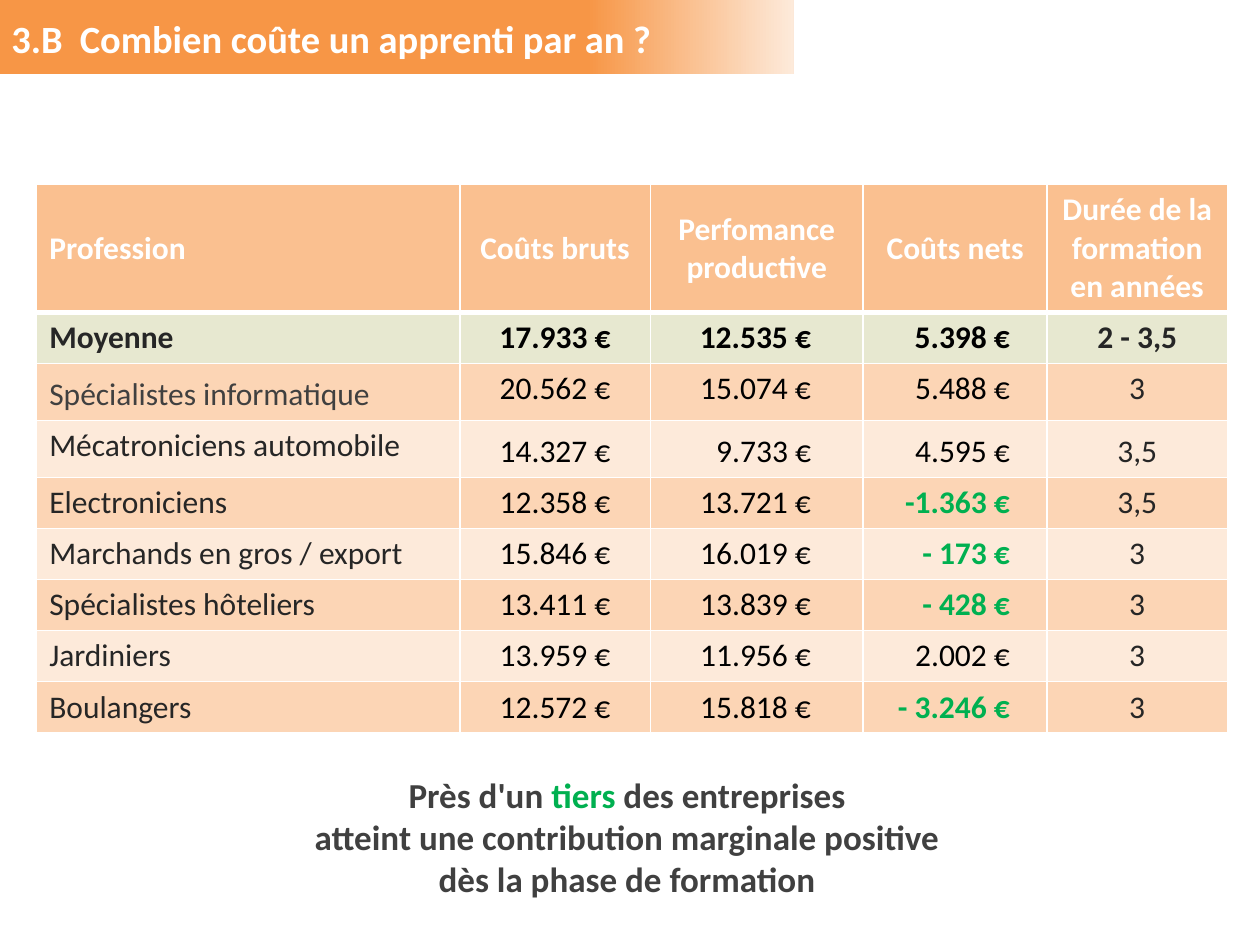
import pptx
import pptx.dml.color
import pptx.enum.shapes
import pptx.enum.text
import pptx.oxml
import pptx.oxml.ns
import pptx.util
from pptx.util import Cm

ALIGN = pptx.enum.text.PP_ALIGN
ANCHOR = pptx.enum.text.MSO_ANCHOR
WHITE, BLACK, DARK, GREY, GREEN = "FFFFFF", "000000", "262626", "404040", "00B050"
HEADER_FILL, AVERAGE_FILL, BAND_FILLS = "FAC090", "E7E8D0", ("FDEADA", "FCD5B5")

HEADINGS = ("Profession", "Coûts bruts", "Perfomance productive", "Coûts nets",
            "Durée de la formation en années")
COSTS = (
    ("Moyenne", "17.933 €", "12.535 €", "5.398 €", "2 - 3,5"),
    ("Spécialistes informatique", "20.562 €", "15.074 €", "5.488 €", "3"),
    ("Mécatroniciens automobile", "14.327 €", "9.733 €", "4.595 €", "3,5"),
    ("Electroniciens", "12.358 €", "13.721 €", "-1.363 €", "3,5"),
    ("Marchands en gros / export", "15.846 €", "16.019 €", "- 173 €", "3"),
    ("Spécialistes hôteliers", "13.411 €", "13.839 €", "- 428 €", "3"),
    ("Jardiniers", "13.959 €", "11.956 €", "2.002 €", "3"),
    ("Boulangers", "12.572 €", "15.818 €", "- 3.246 €", "3"),
)
COLUMN_WIDTHS = (8.53, 3.84, 4.29, 3.71, 3.63)
ROW_HEIGHTS = (2.52, 1.03, 1.13, 1.13) + (1.03,) * 5
COLUMN_ALIGNMENTS = (ALIGN.LEFT, ALIGN.CENTER, ALIGN.RIGHT, ALIGN.RIGHT, ALIGN.CENTER)
RIGHT_MARGINS = {2: 1.05, 3: 0.75}
LOOSE_CELLS = {(2, 0), (3, 1), (3, 2), (3, 3), (3, 4)}


def rgb(code):
    """Return the colour for a hex string."""
    return pptx.dml.color.RGBColor.from_string(code)


def apply_format(target, values):
    """Set each named attribute of the target."""
    for name, value in values.items():
        setattr(target, name, value)


def add_run(paragraph, text, size, color, bold=True):
    """Append a formatted run to the paragraph."""
    run = paragraph.add_run()
    run.text = text
    apply_format(run.font, {"name": "Calibri", "size": pptx.util.Pt(size), "bold": bold})
    run.font.color.rgb = rgb(color)


def add_title(slide, left, top, width, height):
    """Place the title on a bar that fades to the right."""
    bar = slide.shapes.add_shape(pptx.enum.shapes.MSO_SHAPE.RECTANGLE, left, top, width, height)
    bar.shadow.inherit = False
    bar.line.fill.background()
    bar.fill.gradient()
    bar.fill.gradient_angle = 0
    for stop, position, color in zip(bar.fill.gradient_stops, (0.74, 1), ("F79646", "FDEADA")):
        stop.position = position
        stop.color.rgb = rgb(color)

    title = slide.shapes.title
    title.element.addprevious(bar.element)
    apply_format(title, {"left": left, "top": top + Cm(0.17),
                         "width": width, "height": height - Cm(0.3)})
    apply_format(title.text_frame, {"margin_left": Cm(0.23), "word_wrap": True,
                                    "vertical_anchor": ANCHOR.MIDDLE,
                                    "auto_size": pptx.enum.text.MSO_AUTO_SIZE.NONE})
    paragraph = title.text_frame.paragraphs[0]
    paragraph.alignment = ALIGN.LEFT
    namespace = pptx.oxml.ns.nsdecls("a")
    paragraph._p.get_or_add_pPr().append(pptx.oxml.parse_xml(
        f'<a:tabLst {namespace}><a:tab pos="{Cm(1.38)}" algn="l"/></a:tabLst>'))
    add_run(paragraph, "3.B\tCombien coûte un apprenti par an ?", 22, WHITE)


def set_borders(cell, row_index):
    """Draw white cell borders, with a thick line under the header."""
    widths = {"L": 1, "R": 1, "T": 3 if row_index == 1 else 1, "B": 3 if row_index == 0 else 1}
    properties = cell._tc.get_or_add_tcPr()
    for position, (side, width) in enumerate(widths.items()):
        properties.insert(position, pptx.oxml.parse_xml(
            f'<a:ln{side} {pptx.oxml.ns.nsdecls("a")} w="{pptx.util.Pt(width)}">'
            f'<a:solidFill><a:srgbClr val="{WHITE}"/></a:solidFill></a:ln{side}>'))


def cell_style(row_index, column_index, text):
    """Return fill, text colour and weight for a table cell."""
    if row_index == 0:
        return HEADER_FILL, WHITE, True
    fill = AVERAGE_FILL if row_index == 1 else BAND_FILLS[(row_index + 1) % 2]
    if column_index == 3 and text.startswith("-"):
        return fill, GREEN, True
    color = DARK if column_index in (0, 4) else BLACK
    if (row_index, column_index) == (2, 0):
        color = GREY
    return fill, color, row_index == 1


def fill_cell(cell, row_index, column_index, text):
    """Write and format one cell of the cost table."""
    fill, color, bold = cell_style(row_index, column_index, text)
    cell.fill.solid()
    cell.fill.fore_color.rgb = rgb(fill)
    set_borders(cell, row_index)
    paragraph = cell.text_frame.paragraphs[0]
    paragraph.alignment = COLUMN_ALIGNMENTS[column_index]
    if row_index == 0:
        cell.vertical_anchor = ANCHOR.MIDDLE
        paragraph.alignment = ALIGN.CENTER if column_index else ALIGN.LEFT
    elif column_index in RIGHT_MARGINS:
        cell.margin_right = Cm(RIGHT_MARGINS[column_index])
    if (row_index, column_index) in LOOSE_CELLS:
        apply_format(paragraph, {"line_spacing": 1.15, "space_after": pptx.util.Pt(10)})
    add_run(paragraph, text, 18, color, bold)


def add_cost_table(slide, left, top, width, height):
    """Place the table of training costs by profession."""
    rows = (HEADINGS,) + COSTS
    table = slide.shapes.add_table(len(rows), len(HEADINGS), left, top, width, height).table
    for column, column_width in zip(table.columns, COLUMN_WIDTHS):
        column.width = Cm(column_width)
    for row_index, texts in enumerate(rows):
        table.rows[row_index].height = Cm(ROW_HEIGHTS[row_index])
        for column_index, text in enumerate(texts):
            fill_cell(table.cell(row_index, column_index), row_index, column_index, text)


def add_conclusion(slide, left, top, width, height):
    """Place the centred closing statement."""
    frame = slide.shapes.add_textbox(left, top, width, height).text_frame
    frame.word_wrap = True
    lines = (
        (("Près d'un ", GREY), ("tiers", GREEN), (" des entreprises", GREY)),
        (("atteint une contribution marginale positive", GREY),),
        (("dès la phase de formation", GREY),),
    )
    for index, line in enumerate(lines):
        paragraph = frame.add_paragraph() if index else frame.paragraphs[0]
        paragraph.alignment = ALIGN.CENTER
        for text, color in line:
            add_run(paragraph, text, 20, color)


def main():
    """Build and save the presentation."""
    presentation = pptx.Presentation()
    apply_format(presentation, {"slide_width": Cm(25.4), "slide_height": Cm(19.05)})
    slide = presentation.slides.add_slide(presentation.slide_layouts[5])
    add_title(slide, Cm(0), Cm(0), Cm(16), Cm(1.5))
    add_cost_table(slide, Cm(0.74), Cm(3.72), Cm(sum(COLUMN_WIDTHS)), Cm(sum(ROW_HEIGHTS)))
    add_conclusion(slide, Cm(0.64), Cm(15.47), Cm(24), Cm(2.82))
    presentation.save("out.pptx")


if __name__ == "__main__":
    main()
